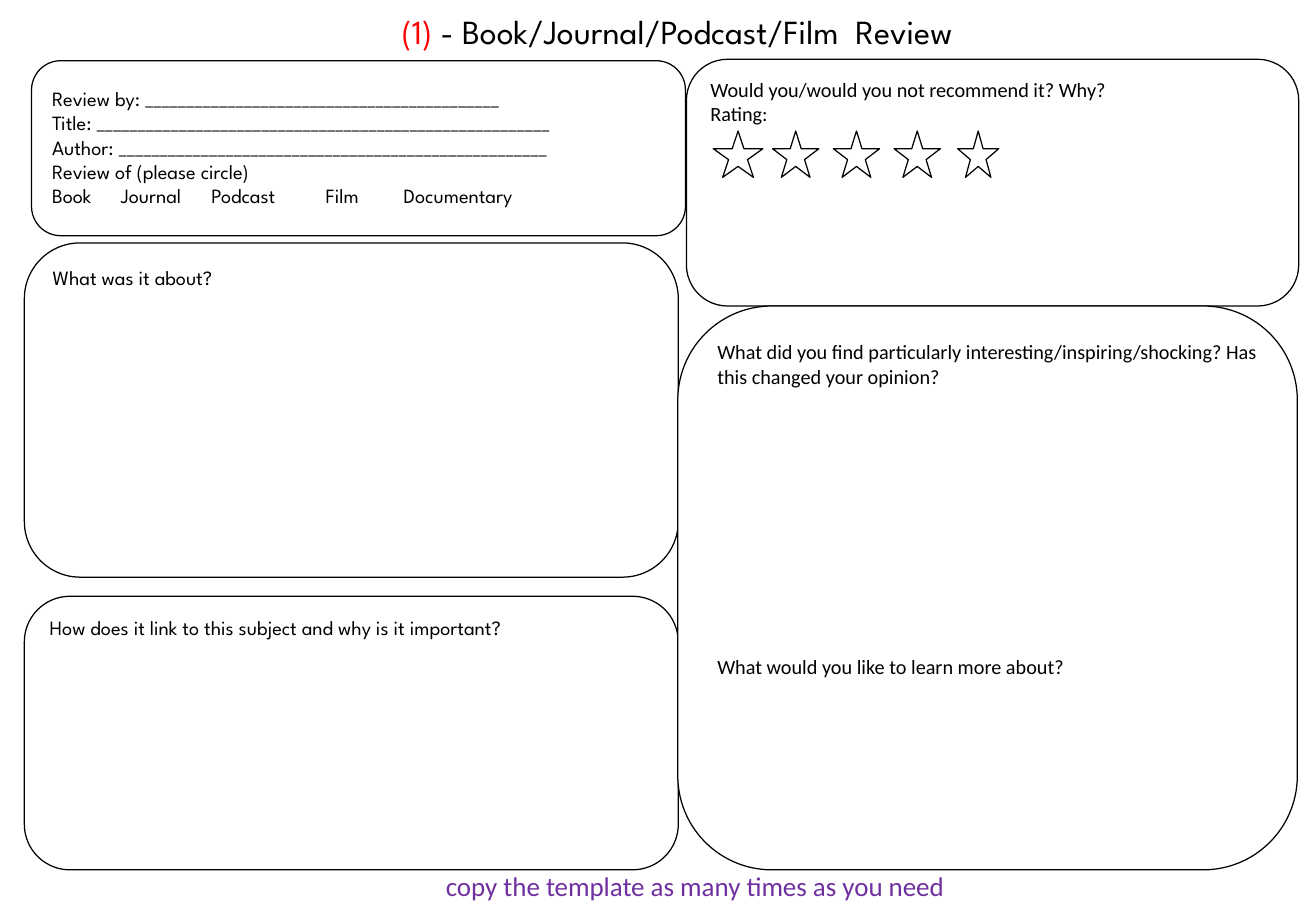
from dataclasses import dataclass
from lxml import etree
from pptx import Presentation
from pptx import util as u
from pptx.dml import color
from pptx.enum import shapes, text
from pptx.oxml import ns


@dataclass(frozen=True)
class Theme:
    black = color.RGBColor(0, 0, 0)
    white = color.RGBColor(255, 255, 255)
    red = color.RGBColor(255, 0, 0)
    purple = color.RGBColor(0x70, 0x30, 0xA0)
    plain = "Calibri"
    display = "League Spartan"
    body = u.Pt(12)
    footer = u.Pt(16)
    title = u.Pt(20)
    outline = u.Pt(0.75)


theme = Theme()


def write(paragraph, words, font=theme.display, size=theme.body, ink=theme.black,
          align=text.PP_ALIGN.LEFT, before=0):
    paragraph.alignment = align
    paragraph.space_before = u.Pt(before)
    run = paragraph.add_run()
    run.text = words
    run.font.name = font
    run.font.size = size
    run.font.color.rgb = ink


def draw(kind, box, filled=True, outlined=True):
    shape = slide.shapes.add_shape(kind, *map(u.Cm, box))
    shape.shadow.inherit = False
    if filled:
        shape.fill.solid()
        shape.fill.fore_color.rgb = theme.white
    else:
        shape.fill.background()
    if outlined:
        shape.line.color.rgb = theme.black
        shape.line.width = theme.outline
    else:
        shape.line.fill.background()
    shape.text_frame.word_wrap = True
    shape.text_frame.vertical_anchor = text.MSO_ANCHOR.TOP
    return shape


presentation = Presentation()
presentation.slide_width = u.Cm(27.51)
presentation.slide_height = u.Cm(19.05)
slide = presentation.slides.add_slide(presentation.slide_layouts[5])

title = slide.shapes.title
title.left, title.top, title.width, title.height = map(u.Cm, (6.35, 0.1, 15.62, 1.02))
title.fill.solid()
title.fill.fore_color.rgb = theme.white
title.text_frame.auto_size = text.MSO_AUTO_SIZE.NONE
title.text_frame.vertical_anchor = text.MSO_ANCHOR.TOP
for words, ink in (("(1)", theme.red), (" - Book/Journal/Podcast/Film  Review", theme.black)):
    write(title.text_frame.paragraphs[0], words, size=theme.title, ink=ink,
          align=text.PP_ALIGN.CENTER)

rounded = shapes.MSO_SHAPE.FLOWCHART_ALTERNATE_PROCESS
panels = [
    ((14.35, 1.24, 12.8, 5.16), theme.plain, 0,
     ["Would you/would you not recommend it? Why?", "Rating:"]),
    ((0.51, 12.47, 13.67, 5.72), theme.display, 0,
     ["How does it link to this subject and why is it important?"]),
    ((0.51, 5.08, 13.67, 6.99), theme.display, 0, ["What was it about?"]),
    ((14.17, 6.4, 12.95, 11.79), theme.plain, 158,
     ["What did you find particularly interesting/inspiring/shocking? "
      "Has this changed your opinion?",
      "What would you like to learn more about?"]),
]
for box, font, gap, questions in panels:
    frame = draw(rounded, box).text_frame
    for index, question in enumerate(questions):
        paragraph = frame.add_paragraph() if index else frame.paragraphs[0]
        write(paragraph, question, font=font, before=gap * index)

details = draw(shapes.MSO_SHAPE.RECTANGLE, (0.84, 1.68, 13.34, 2.62), outlined=False).text_frame
fields = [
    "Review by: " + "_" * 43,
    "Title: " + "_" * 55,
    "Author: " + "_" * 52,
    "Review of (please circle)",
    "Book\tJournal\tPodcast\tFilm\tDocumentary",
]
for index, field in enumerate(fields):
    paragraph = details.add_paragraph() if index else details.paragraphs[0]
    write(paragraph, field)
tabs = etree.SubElement(paragraph._p.get_or_add_pPr(), ns.qn("a:tabLst"))
for stop in (1.44, 3.33, 5.72, 7.35):
    etree.SubElement(tabs, ns.qn("a:tab"), pos=str(int(u.Cm(stop))), algn="l")
draw(rounded, (0.66, 1.27, 13.67, 3.66), filled=False)

for left, width in ((14.91, 1.04), (16.15, 0.97), (17.42, 0.97), (18.69, 0.97), (20.02, 0.86)):
    draw(shapes.MSO_SHAPE.STAR_5_POINT, (left, 2.74, width, 0.97))

footer = slide.shapes.add_textbox(*map(u.Cm, (0.84, 18.06, 27.51, 0.94))).text_frame
footer.word_wrap = True
footer.auto_size = text.MSO_AUTO_SIZE.SHAPE_TO_FIT_TEXT
write(footer.paragraphs[0], "copy the template as many times as you need ", font=theme.plain,
      size=theme.footer, ink=theme.purple, align=text.PP_ALIGN.CENTER)

presentation.save("out.pptx")
